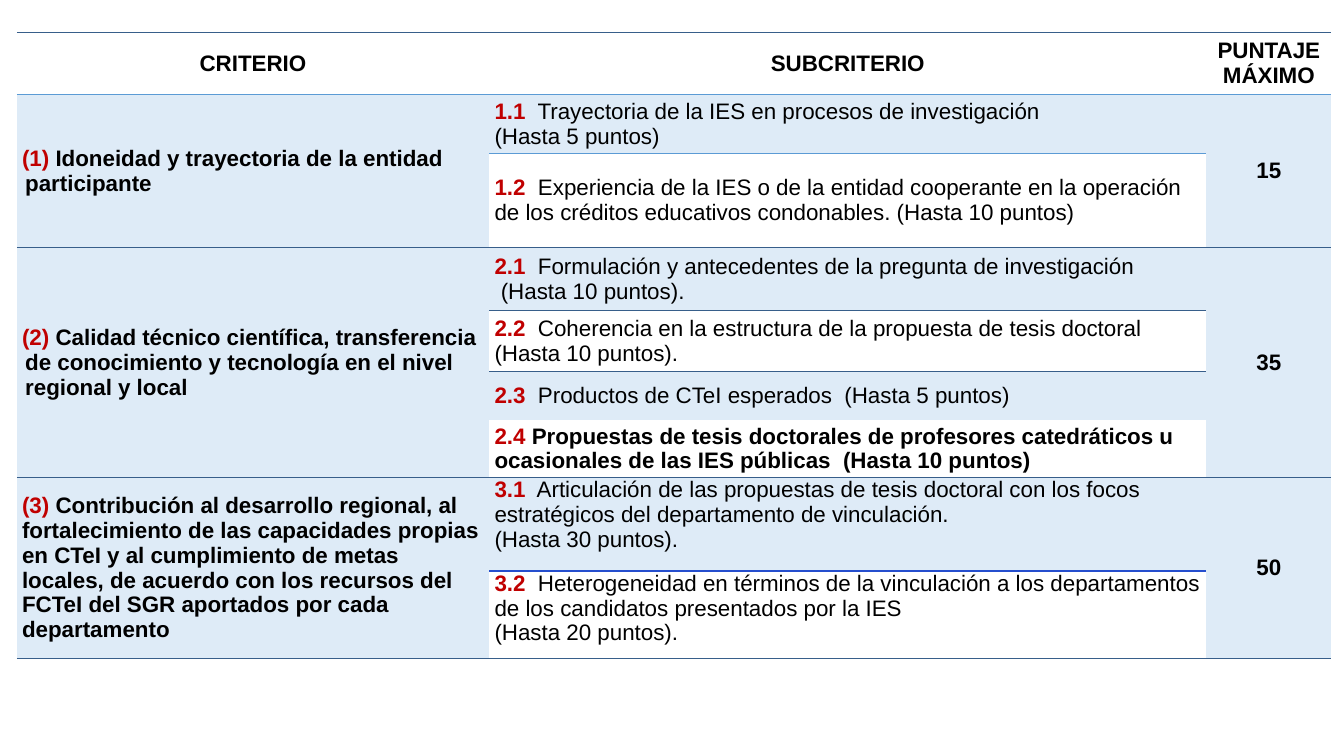
"""Build the slide with the table of evaluation criteria and maximum scores."""
import itertools
from dataclasses import dataclass

import lxml.etree
import pptx
import pptx.dml.color
import pptx.enum.text
import pptx.oxml.ns
import pptx.table
import pptx.util

EMU_PER_PX = 9525
SLIDE_WIDTH, SLIDE_HEIGHT = 1280, 720
TABLE_LEFT, TABLE_TOP = 16, 31
COLUMN_WIDTHS = (450, 683, 119)
ROW_HEIGHTS = (59, 56, 90, 60, 58, 46, 55, 89, 83)
SIDE_MARGIN = 5
HEADINGS = ("CRITERIO", "SUBCRITERIO", "PUNTAJE MÁXIMO")
FONT_NAME, FONT_SIZE = "Arial", 16
NO_STYLE = "{2D5ABB26-0587-4C30-8999-92F81FD0307C}"

BLACK = pptx.dml.color.RGBColor(0x00, 0x00, 0x00)
RED = pptx.dml.color.RGBColor(0xC0, 0x00, 0x00)
PALE_BLUE = pptx.dml.color.RGBColor(0xDE, 0xEB, 0xF7)
LIGHT_BLUE = pptx.dml.color.RGBColor(0x5B, 0x9B, 0xD5)
DARK_BLUE = pptx.dml.color.RGBColor(0x37, 0x5E, 0x8A)
BRIGHT_BLUE = pptx.dml.color.RGBColor(0x25, 0x4E, 0xCE)

ALIGN = pptx.enum.text.PP_ALIGN
ANCHOR = pptx.enum.text.MSO_ANCHOR


@dataclass(frozen=True)
class Subcriterion:
    number: str
    text: str
    points: str = ""
    bold: bool = False
    points_indent: int = 0


@dataclass(frozen=True)
class Criterion:
    number: str
    text: str
    score: str
    subcriteria: tuple[Subcriterion, ...]
    hanging: int = 3
    anchor: ANCHOR = ANCHOR.MIDDLE


@dataclass(frozen=True)
class Rule:
    boundary: int
    columns: tuple[int, ...]
    color: pptx.dml.color.RGBColor


CRITERIA = (
    Criterion("(1) ", "Idoneidad y trayectoria de la entidad participante", "15", (
        Subcriterion("1.1 ", " Trayectoria de la IES en procesos de investigación",
                     "(Hasta 5 puntos)"),
        Subcriterion("1.2 ", " Experiencia de la IES o de la entidad cooperante en la operación "
                     "de los créditos educativos condonables. (Hasta 10 puntos)"),
    )),
    Criterion("(2) ", "Calidad técnico científica, transferencia de conocimiento y tecnología "
              "en el nivel regional y local", "35", (
        Subcriterion("2.1", "  Formulación y antecedentes de la pregunta de investigación",
                     "(Hasta 10 puntos).", points_indent=6),
        Subcriterion("2.2", "  Coherencia en la estructura de la propuesta de tesis doctoral",
                     "(Hasta 10 puntos)."),
        Subcriterion("2.3", "  Productos de CTeI esperados  (Hasta 5 puntos)"),
        Subcriterion("2.4 ", "Propuestas de tesis doctorales de profesores catedráticos u "
                     "ocasionales de las IES públicas  (Hasta 10 puntos)", bold=True),
    )),
    Criterion("(3) ", "Contribución al desarrollo regional, al fortalecimiento de las capacidades "
              "propias en CTeI y al cumplimiento de metas locales, de acuerdo con los recursos "
              "del FCTeI del SGR aportados por cada departamento", "50", (
        Subcriterion("3.1", "  Articulación de las propuestas de tesis doctoral con los focos "
                     "estratégicos del departamento de vinculación.", "(Hasta 30 puntos)."),
        Subcriterion("3.2", "  Heterogeneidad en términos de la vinculación a los departamentos "
                     "de los candidatos presentados por la IES", "(Hasta 20 puntos)."),
    ), hanging=0, anchor=ANCHOR.TOP),
)

RULES = (
    Rule(0, (0, 1, 2), DARK_BLUE),
    Rule(1, (0, 1, 2), LIGHT_BLUE),
    Rule(3, (0, 1, 2), DARK_BLUE),
    Rule(4, (1,), DARK_BLUE),
    Rule(7, (0, 1, 2), DARK_BLUE),
    Rule(8, (1,), BRIGHT_BLUE),
    Rule(9, (0, 1, 2), DARK_BLUE),
)


def px(length: int) -> pptx.util.Emu:
    return pptx.util.Emu(length * EMU_PER_PX)


def format_paragraph(paragraph, bold: bool | None, margin: int = 0, indent: int = 0) -> None:
    properties = paragraph._p.get_or_add_pPr()
    properties.set("marL", str(px(margin)))
    properties.set("indent", str(px(indent)))
    paragraph.font.name = FONT_NAME
    paragraph.font.size = pptx.util.Pt(FONT_SIZE)
    paragraph.font.bold = bold


def write_centred(cell: pptx.table._Cell, text: str) -> None:
    paragraph = cell.text_frame.paragraphs[0]
    paragraph.text = text
    paragraph.alignment = ALIGN.CENTER
    format_paragraph(paragraph, True)
    paragraph.font.color.rgb = BLACK


def write_numbered(cell: pptx.table._Cell, number: str, text: str, bold: bool,
                   hanging: int = 0) -> None:
    paragraph = cell.text_frame.paragraphs[0]
    format_paragraph(paragraph, True if bold else None, hanging, -hanging)
    for part, color, part_bold in ((number, RED, True), (text, BLACK, bold)):
        run = paragraph.add_run()
        run.text = part
        run.font.color.rgb = color
        if not bold:
            run.font.bold = part_bold


def write_subcriterion(cell: pptx.table._Cell, subcriterion: Subcriterion) -> None:
    write_numbered(cell, subcriterion.number, subcriterion.text, subcriterion.bold)
    if subcriterion.points:
        paragraph = cell.text_frame.add_paragraph()
        paragraph.text = subcriterion.points
        format_paragraph(paragraph, False, subcriterion.points_indent)
        paragraph.font.color.rgb = BLACK


def add_border(cell: pptx.table._Cell, side: str, color: pptx.dml.color.RGBColor) -> None:
    properties = cell._tc.get_or_add_tcPr()
    tag = pptx.oxml.ns.qn
    line = lxml.etree.Element(tag(f"a:ln{side}"), w=str(pptx.util.Pt(1)))
    fill = lxml.etree.SubElement(line, tag("a:solidFill"))
    lxml.etree.SubElement(fill, tag("a:srgbClr"), val=str(color))
    position = len(properties.findall(tag("a:lnT"))) if side == "B" else 0
    properties.insert(position, line)


def draw_rule(table: pptx.table.Table, rule: Rule, origins: dict[int, int]) -> None:
    for column in rule.columns:
        if rule.boundary > 0:
            last_row = rule.boundary - 1
            rows = {last_row} if column == 1 else {last_row, origins[last_row]}
            for row in rows:
                add_border(table.cell(row, column), "B", rule.color)
        if rule.boundary < len(ROW_HEIGHTS):
            add_border(table.cell(rule.boundary, column), "T", rule.color)


def add_criteria_table(slide) -> None:
    frame = slide.shapes.add_table(len(ROW_HEIGHTS), len(COLUMN_WIDTHS), px(TABLE_LEFT),
                                   px(TABLE_TOP), px(sum(COLUMN_WIDTHS)), px(sum(ROW_HEIGHTS)))
    table = frame.table
    table.first_row = table.horz_banding = False
    table._tbl.tblPr.find(pptx.oxml.ns.qn("a:tableStyleId")).text = NO_STYLE
    for column, width in zip(table.columns, COLUMN_WIDTHS):
        column.width = px(width)
    for row, height in zip(table.rows, ROW_HEIGHTS):
        row.height = px(height)
    for row, column in itertools.product(range(len(ROW_HEIGHTS)), range(len(COLUMN_WIDTHS))):
        cell = table.cell(row, column)
        cell.margin_left = cell.margin_right = px(SIDE_MARGIN)
        cell.margin_top = cell.margin_bottom = 0
        cell.vertical_anchor = ANCHOR.MIDDLE
        cell.fill.background()
    for column, heading in enumerate(HEADINGS):
        write_centred(table.cell(0, column), heading)

    origins = {0: 0}
    first_row = 1
    for criterion in CRITERIA:
        last_row = first_row + len(criterion.subcriteria) - 1
        for row, subcriterion in enumerate(criterion.subcriteria, first_row):
            origins[row] = first_row
            cell = table.cell(row, 1)
            cell.vertical_anchor = criterion.anchor
            write_subcriterion(cell, subcriterion)
            for column in (0, 1, 2) if (row - first_row) % 2 == 0 else (0, 2):
                table.cell(row, column).fill.solid()
                table.cell(row, column).fill.fore_color.rgb = PALE_BLUE
        for column in (0, 2):
            table.cell(first_row, column).merge(table.cell(last_row, column))
        write_numbered(table.cell(first_row, 0), criterion.number, criterion.text, True,
                       criterion.hanging)
        write_centred(table.cell(first_row, 2), criterion.score)
        first_row = last_row + 1
    for rule in RULES:
        draw_rule(table, rule, origins)


def main() -> None:
    presentation = pptx.Presentation()
    presentation.slide_width, presentation.slide_height = px(SLIDE_WIDTH), px(SLIDE_HEIGHT)
    add_criteria_table(presentation.slides.add_slide(presentation.slide_layouts[6]))
    presentation.save("out.pptx")


if __name__ == "__main__":
    main()
